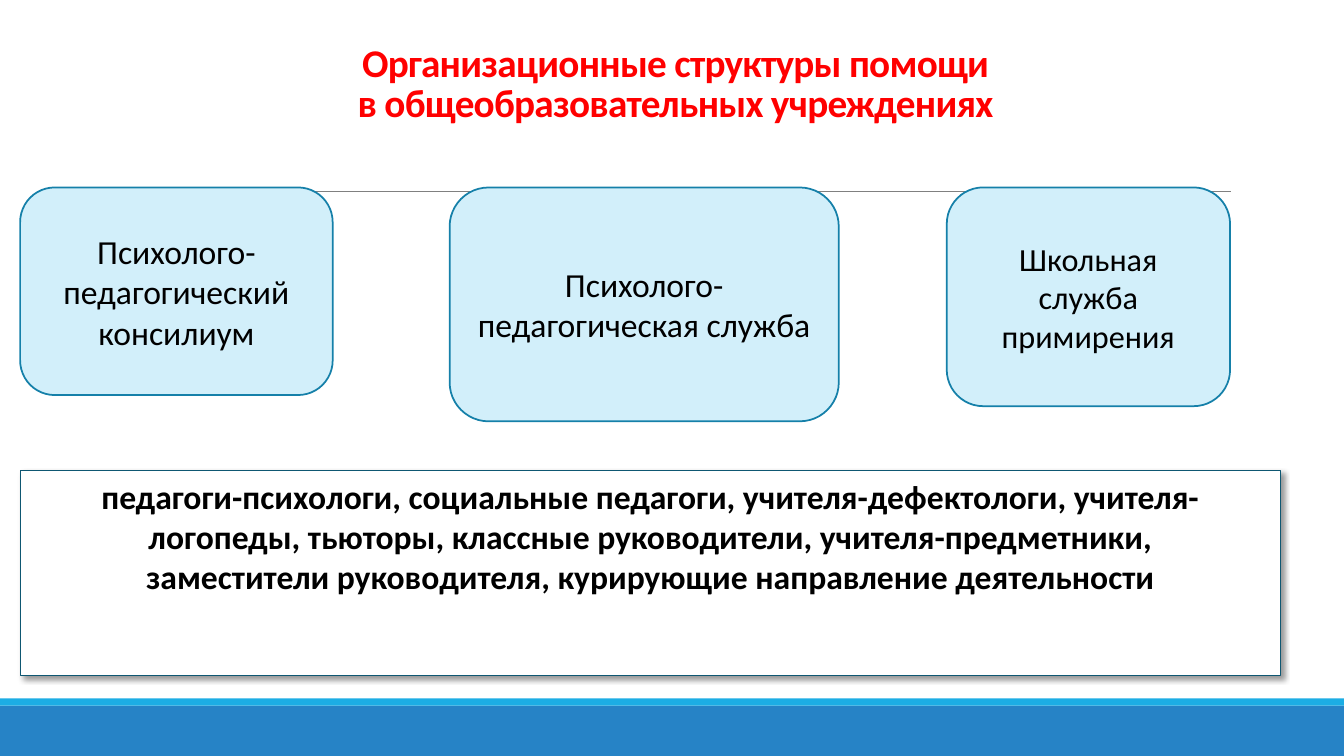
from dataclasses import dataclass

from lxml.etree import SubElement
from pptx import Presentation
from pptx.dml.color import RGBColor
from pptx.enum.shapes import MSO_CONNECTOR, MSO_SHAPE
from pptx.enum.text import MSO_ANCHOR, PP_ALIGN
from pptx.oxml import parse_xml
from pptx.oxml.ns import nsdecls, qn
from pptx.util import Inches, Pt

CELL = 0.1
COLUMNS, ROWS = 133.3, 75


@dataclass(frozen=True)
class Theme:
    """Colours, font and type sizes of the slide."""
    font: str = "Calibri"
    title: str = "FF0000"
    text: str = "000000"
    white: str = "FFFFFF"
    card: str = "D2EFFA"
    card_line: str = "1580A9"
    staff_line: str = "0E5772"
    rule: str = "808080"
    band: str = "2683C6"
    stripe: str = "1CADE4"
    title_size: int = 28
    text_size: int = 24
    small_size: int = 23


THEME = Theme()


def grid(*cells):
    """Turn columns and rows of the grid into lengths."""
    return [Inches(cell * CELL) for cell in cells]


def write(box, *texts, size=THEME.text_size, color=THEME.text, bold=False,
          anchor=MSO_ANCHOR.MIDDLE, line_spacing=1.0, tracking=0):
    """Write centred paragraphs into a box."""
    frame = box.text_frame
    frame.word_wrap = True
    frame.vertical_anchor = anchor
    for index, text in enumerate(texts):
        para = frame.add_paragraph() if index else frame.paragraphs[0]
        para.text = text
        para.alignment = PP_ALIGN.CENTER
        para.line_spacing = line_spacing
        for span in para.runs:
            span.font.name = THEME.font
            span.font.size = Pt(size)
            span.font.bold = bold
            span.font.color.rgb = RGBColor.from_string(color)
            if tracking:
                span.font._element.set("spc", str(round(tracking * 100)))


def add_box(page, place, fill, line=None, weight=1, kind=MSO_SHAPE.RECTANGLE):
    """Add a filled shape without shadow."""
    box = page.shapes.add_shape(kind, *grid(*place))
    box.shadow.inherit = False
    box.fill.solid()
    box.fill.fore_color.rgb = RGBColor.from_string(fill)
    if line:
        box.line.color.rgb = RGBColor.from_string(line)
        box.line.width = Pt(weight)
    else:
        box.line.fill.background()
    return box


def add_rule(page, left, right, row):
    """Add the thin horizontal rule under the title."""
    rule = page.shapes.add_connector(MSO_CONNECTOR.STRAIGHT, *grid(left, row, right, row))
    rule.line.color.rgb = RGBColor.from_string(THEME.rule)
    rule.line.width = Pt(0.5)
    SubElement(rule._element.spPr, qn("a:effectLst"))


def add_title(page, place, text):
    """Add the slide title."""
    box = page.shapes.add_textbox(*grid(*place))
    write(box, text, size=THEME.title_size, color=THEME.title, bold=True,
          anchor=MSO_ANCHOR.BOTTOM, line_spacing=0.85, tracking=-0.5)


def add_card(page, left, width, height, text, size=THEME.text_size):
    """Add one rounded card of the top row."""
    card = add_box(page, (left, 18.6, width, height), THEME.card, THEME.card_line,
                   1.25, MSO_SHAPE.ROUNDED_RECTANGLE)
    write(card, text, size=size)


def add_drop_shadow(box):
    """Give a box a soft shadow to the lower right."""
    effects = box._element.spPr.find(qn("a:effectLst"))
    effects.append(parse_xml(
        f'<a:outerShdw {nsdecls("a")} blurRad="{Pt(4)}" dist="{Pt(3)}" '
        f'dir="{45 * 60000}" algn="tl" rotWithShape="0">'
        f'<a:srgbClr val="{THEME.text}"><a:alpha val="40000"/></a:srgbClr></a:outerShdw>'))


def add_staff(page, place, *texts):
    """Add the shadowed panel that lists the staff."""
    panel = add_box(page, place, THEME.white, THEME.staff_line, 0.75)
    add_drop_shadow(panel)
    write(panel, *texts, bold=True, anchor=MSO_ANCHOR.TOP)


def main():
    """Build the slide and save it."""
    deck = Presentation()
    deck.slide_width, deck.slide_height = grid(COLUMNS, ROWS)
    page = deck.slides.add_slide(deck.slide_layouts[6])

    add_box(page, (0, 70, COLUMNS, 5), THEME.band)
    add_box(page, (0, 69.3, COLUMNS, 0.7), THEME.stripe)
    add_rule(page, 13.1, 122.1, 19)
    add_title(page, (12, 3.1, 110, 9.8),
              "Организационные структуры помощи\vв общеобразовательных учреждениях")
    add_card(page, 2, 31, 20.6, "Психолого-педагогический консилиум")
    add_card(page, 44.6, 38.6, 23.2, "Психолого-педагогическая служба")
    add_card(page, 93.9, 28.1, 21.7, "Школьная служба примирения", THEME.small_size)
    add_staff(page, (2, 46.7, 125, 20.3),
              "педагоги-психологи, социальные педагоги, учителя-дефектологи, "
              "учителя-логопеды, тьюторы, классные руководители, учителя-предметники,",
              "заместители руководителя, курирующие направление деятельности")
    deck.save("out.pptx")


if __name__ == "__main__":
    main()
